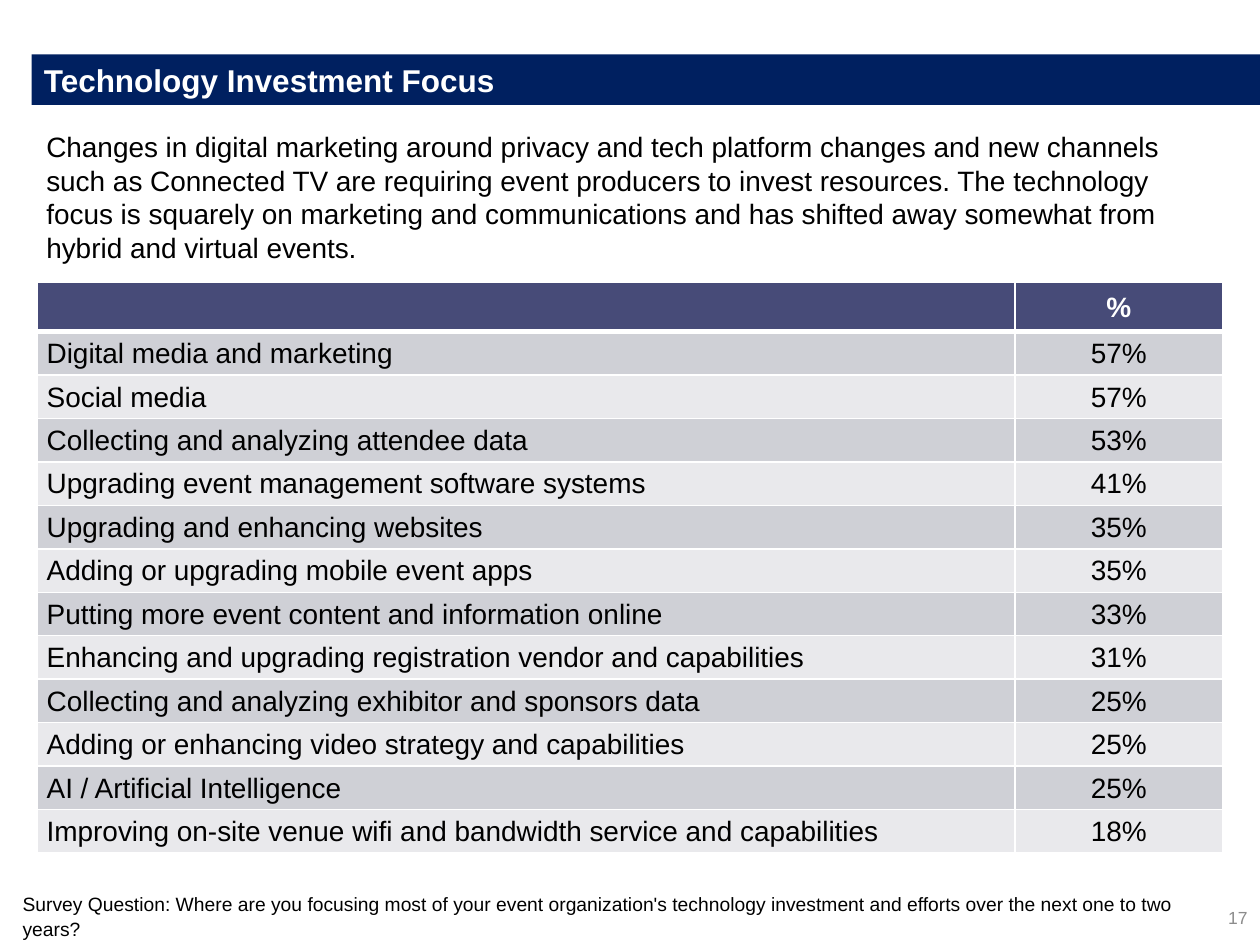
import pptx
import pptx.util
import pptx.dml.color
import pptx.enum.shapes
import pptx.enum.text
import pptx.oxml.ns
from lxml import etree

Pt = pptx.util.Pt
RGB = pptx.dml.color.RGBColor.from_string
ALIGN = pptx.enum.text.PP_ALIGN
MIDDLE = pptx.enum.text.MSO_ANCHOR.MIDDLE

COLORS = {
    "banner": "002060",
    "header": "474B78",
    "odd_row": "CFD0D6",
    "even_row": "E9E9EC",
    "white": "FFFFFF",
    "text": "000000",
    "page_number": "8C8C8C",
}

FOCUS_AREAS = [
    ("Digital media and marketing", 57),
    ("Social media", 57),
    ("Collecting and analyzing attendee data", 53),
    ("Upgrading event management software systems", 41),
    ("Upgrading and enhancing websites", 35),
    ("Adding or upgrading mobile event apps", 35),
    ("Putting more event content and information online", 33),
    ("Enhancing and upgrading registration vendor and capabilities", 31),
    ("Collecting and analyzing exhibitor and sponsors data", 25),
    ("Adding or enhancing video strategy and capabilities", 25),
    ("AI / Artificial Intelligence", 25),
    ("Improving on-site venue wifi and bandwidth service and capabilities", 18),
]


def apply_format(target, values):
    for name, value in values.items():
        setattr(target, name, value)


def write_text(frame, wording, size, color, bold=False, **paragraph_format):
    paragraph = frame.paragraphs[0]
    apply_format(paragraph, paragraph_format)
    run = paragraph.add_run()
    run.text = wording
    apply_format(run.font, {"name": "Arial", "size": Pt(size), "bold": bold})
    run.font.color.rgb = RGB(COLORS[color])


def add_passage(slide, box, wording, size, color="text", anchor=None, **paragraph_format):
    passage = slide.shapes.add_textbox(*map(Pt, box))
    apply_format(passage.text_frame, {"word_wrap": True, "vertical_anchor": anchor})
    write_text(passage.text_frame, wording, size, color, **paragraph_format)


def add_banner(slide, box, title):
    banner = slide.shapes.add_shape(
        pptx.enum.shapes.MSO_SHAPE.RECTANGLE, *map(Pt, box))
    banner.shadow.inherit = False
    banner.fill.solid()
    banner.fill.fore_color.rgb = RGB(COLORS["banner"])
    banner.line.fill.background()
    apply_format(banner.text_frame, {"word_wrap": True, "vertical_anchor": MIDDLE})
    write_text(banner.text_frame, title, 18, "white", True, alignment=ALIGN.LEFT)


def add_borders(cell, widths):
    properties = cell._tc.get_or_add_tcPr()
    for position, (side, width) in enumerate(widths.items()):
        border = etree.Element(pptx.oxml.ns.qn(f"a:{side}"), w=str(int(Pt(width))))
        fill = etree.SubElement(border, pptx.oxml.ns.qn("a:solidFill"))
        etree.SubElement(fill, pptx.oxml.ns.qn("a:srgbClr"), val=COLORS["white"])
        properties.insert(position, border)


def style_cell(cell, fill, top, bottom, left_margin):
    cell.fill.solid()
    cell.fill.fore_color.rgb = RGB(COLORS[fill])
    apply_format(cell, {
        "vertical_anchor": MIDDLE,
        "margin_left": Pt(left_margin),
        "margin_right": Pt(0.7),
        "margin_top": Pt(0.7),
        "margin_bottom": Pt(0),
    })
    add_borders(cell, {"lnL": 1, "lnR": 1, "lnT": top, "lnB": bottom})


def add_focus_table(slide, box, areas):
    left, top, width, height = box
    header_height, share_width = 28, 118.6
    row_height = (height - header_height) / len(areas)
    table = slide.shapes.add_table(len(areas) + 1, 2, *map(Pt, box)).table
    table.columns[0].width = Pt(width - share_width)
    table.columns[1].width = Pt(share_width)
    for index, row in enumerate(table.rows):
        row.height = Pt(row_height if index else header_height)
        fill = ("even_row", "odd_row")[index % 2] if index else "header"
        for cell, margin in zip(row.cells, (5.2, 0.7)):
            style_cell(cell, fill, 3 if index == 1 else 1, 1 if index else 3, margin)
    write_text(table.cell(0, 1).text_frame, "%", 16, "white", True,
               alignment=ALIGN.CENTER)
    for index, (area, share) in enumerate(areas, 1):
        write_text(table.cell(index, 0).text_frame, area, 16, "text")
        write_text(table.cell(index, 1).text_frame, f"{share}%", 16, "text",
                   alignment=ALIGN.CENTER)


def add_footer(slide, box):
    left, top, width, height = box
    add_passage(slide, (left + 546.5, top + 4.3, 167.7, 28.8), "17", 10,
                "page_number", MIDDLE, alignment=ALIGN.RIGHT)
    add_passage(slide, (left, top, 690, height),
                "Survey Question: Where are you focusing most of your event "
                "organization's technology investment and efforts over the next "
                "one to two years?", 11, line_spacing=1.07)


def build_focus_slide(deck):
    slide = deck.slides.add_slide(deck.slide_layouts[6])
    add_footer(slide, (5.8, 505.5, 714.2, 34.5))
    add_banner(slide, (18, 31, 702, 29), "Technology Investment Focus")
    add_passage(slide, (19.4, 70.6, 678, 85),
                "Changes in digital marketing around privacy and tech platform "
                "changes and new channels such as Connected TV are requiring event "
                "producers to invest resources. The technology focus is squarely on "
                "marketing and communications and has shifted away somewhat from "
                "hybrid and virtual events.", 16)
    add_focus_table(slide, (21.5, 161.5, 677.2, 326), FOCUS_AREAS)


def main():
    deck = pptx.Presentation()
    apply_format(deck, {"slide_width": Pt(720), "slide_height": Pt(540)})
    build_focus_slide(deck)
    deck.save("out.pptx")


if __name__ == "__main__":
    main()
